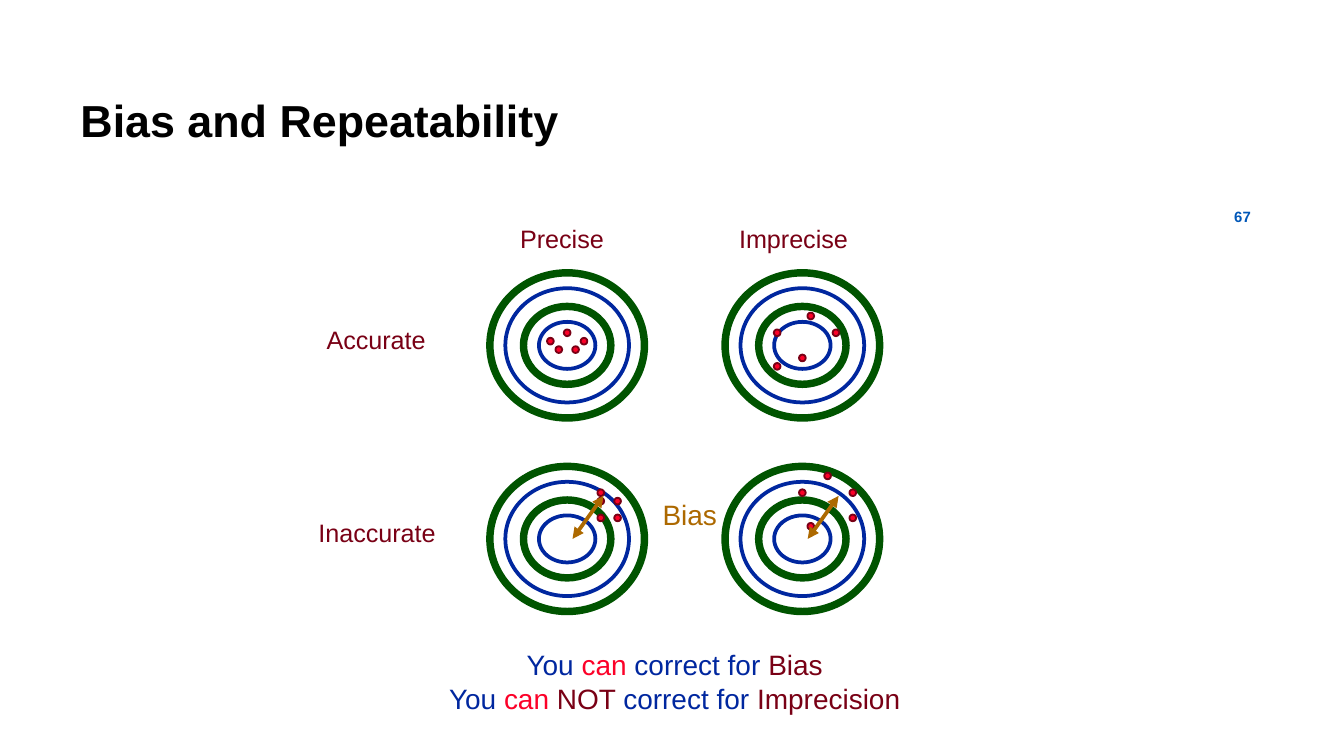
from pptx import Presentation
from pptx.dml.color import RGBColor
from pptx.enum.shapes import MSO_CONNECTOR, MSO_SHAPE
from pptx.enum.text import MSO_ANCHOR, PP_ALIGN
from pptx.oxml.ns import qn
from pptx.util import Inches, Pt
from lxml.etree import SubElement

FONT = "Arial"
BLUE, GREEN, RED, MAROON, OCHRE = "00279F", "005400", "FC0128", "790015", "AD6900"

# Grid of targets: centre of the first one, then column and row steps
LEFT, TOP, COL_STEP, ROW_STEP = 4.22, 2.57, 1.75, 1.44
UNIT = 0.0625  # spacing of the shots, a sixteenth of an inch
DOT = 0.05
RINGS = [  # width, height, colour, line width
    (0.65, 0.58, GREEN, 4),
    (0.92, 0.85, BLUE, 2),
    (0.42, 0.35, BLUE, 2),
    (1.15, 1.08, GREEN, 4),
]
# (column, row): shots in units from the centre of the target
SHOTS = {
    (0, 0): [(-2, -0.5), (0, -1.5), (1, 0.5), (2, -0.5), (-1, 0.5)],
    (1, 0): [(-3, -1.5), (1, -3.5), (0, 1.5), (4, -1.5), (-3, 2.5)],
    (0, 1): [(6, -2.5), (4, -5.5), (4, -4.5), (4, -2.5), (6, -4.5)],
    (1, 1): [(0, -5.5), (3, -7.5), (6, -2.5), (6, -5.5), (1, -1.5)],
}


def rgb(value):
    return RGBColor.from_string(value)


def centre(col, row):
    return LEFT + col * COL_STEP, TOP + row * ROW_STEP


def add_ellipse(shapes, cx, cy, w, h, line, width, fill=None):
    sp = shapes.add_shape(MSO_SHAPE.OVAL, Inches(cx - w / 2), Inches(cy - h / 2),
                          Inches(w), Inches(h))
    sp.shadow.inherit = False
    if fill:
        sp.fill.solid()
        sp.fill.fore_color.rgb = rgb(fill)
    else:
        sp.fill.background()
    sp.line.color.rgb = rgb(line)
    sp.line.width = Pt(width)


def add_target(s, col, row):
    group = s.shapes.add_group_shape()
    for w, h, color, width in RINGS:
        add_ellipse(group.shapes, *centre(col, row), w, h, color, width)


def add_shots(s, col, row):
    cx, cy = centre(col, row)
    for dx, dy in SHOTS[col, row]:
        add_ellipse(s.shapes, cx + dx * UNIT, cy + dy * UNIT, DOT, DOT, MAROON, 1, RED)


def add_bias_arrow(s, col, row):
    cx, cy = centre(col, row)
    line = s.shapes.add_connector(MSO_CONNECTOR.STRAIGHT, Inches(cx + 0.04), Inches(cy),
                                  Inches(cx + 0.27), Inches(cy - 0.32))
    line.line.color.rgb = rgb(OCHRE)
    line.line.width = Pt(2)
    for end in ("a:headEnd", "a:tailEnd"):
        SubElement(line.line._get_or_add_ln(), qn(end), type="triangle")
    SubElement(line._element.spPr, qn("a:effectLst"))


def add_text(s, box, paragraphs, size, bold=False, align=PP_ALIGN.LEFT,
             anchor=MSO_ANCHOR.TOP, wrap=True, inset=(0.1, 0.05)):
    tf = s.shapes.add_textbox(*map(Inches, box)).text_frame
    tf.word_wrap = wrap
    tf.vertical_anchor = anchor
    tf.margin_left = tf.margin_right = Inches(inset[0])
    tf.margin_top = tf.margin_bottom = Inches(inset[1])
    for i, runs in enumerate(paragraphs):
        p = tf.add_paragraph() if i else tf.paragraphs[0]
        p.alignment = align
        for text, color in runs:
            r = p.add_run()
            r.text = text
            r.font.name = FONT
            r.font.size = Pt(size)
            r.font.bold = bold
            r.font.color.rgb = rgb(color)


def add_label(s, box, paragraphs, size, align=PP_ALIGN.LEFT):
    add_text(s, box, paragraphs, size, align=align, wrap=False, inset=(0.07, 0.04))


def main():
    prs = Presentation()
    prs.slide_width = Inches(10)
    prs.slide_height = prs.slide_width * 9 // 16
    s = prs.slides.add_slide(prs.slide_layouts[6])

    # Title
    add_text(s, (0.5, 0.5, 8.35, 0.78), [[("Bias and Repeatability", "000000")]], 24,
             bold=True, anchor=MSO_ANCHOR.MIDDLE)

    # Targets with their shots
    for cell in SHOTS:
        add_target(s, *cell)
    for cell in SHOTS:
        add_shots(s, *cell)

    # Column and row headings
    for text, x, y, w in [("Precise", 3.8, 1.62, 0.78), ("Imprecise", 5.43, 1.62, 0.97),
                          ("Accurate", 2.36, 2.37, 0.9), ("Inaccurate", 2.3, 3.81, 1.03)]:
        add_label(s, (x, y, w, 0.3), [[(text, MAROON)]], 13.5)

    # Bias in the lower row
    for col in range(2):
        add_bias_arrow(s, col, 1)
    add_label(s, (4.86, 3.66, 0.56, 0.33), [[("Bias", OCHRE)]], 15)

    # Conclusion
    start = [("You", BLUE), (" can ", RED)]
    add_label(s, (3.25, 4.78, 3.54, 0.58), [
        start + [("correct for ", BLUE), ("Bias", MAROON)],
        start + [("NOT ", MAROON), ("correct for ", BLUE), ("Imprecision", MAROON)],
    ], 15, PP_ALIGN.CENTER)

    # Slide number
    add_text(s, (8.99, 1.55, 0.51, 0.13), [[("67", "0057B8")]], 8, bold=True,
             align=PP_ALIGN.CENTER, anchor=MSO_ANCHOR.MIDDLE)

    prs.save("out.pptx")


if __name__ == "__main__":
    main()
